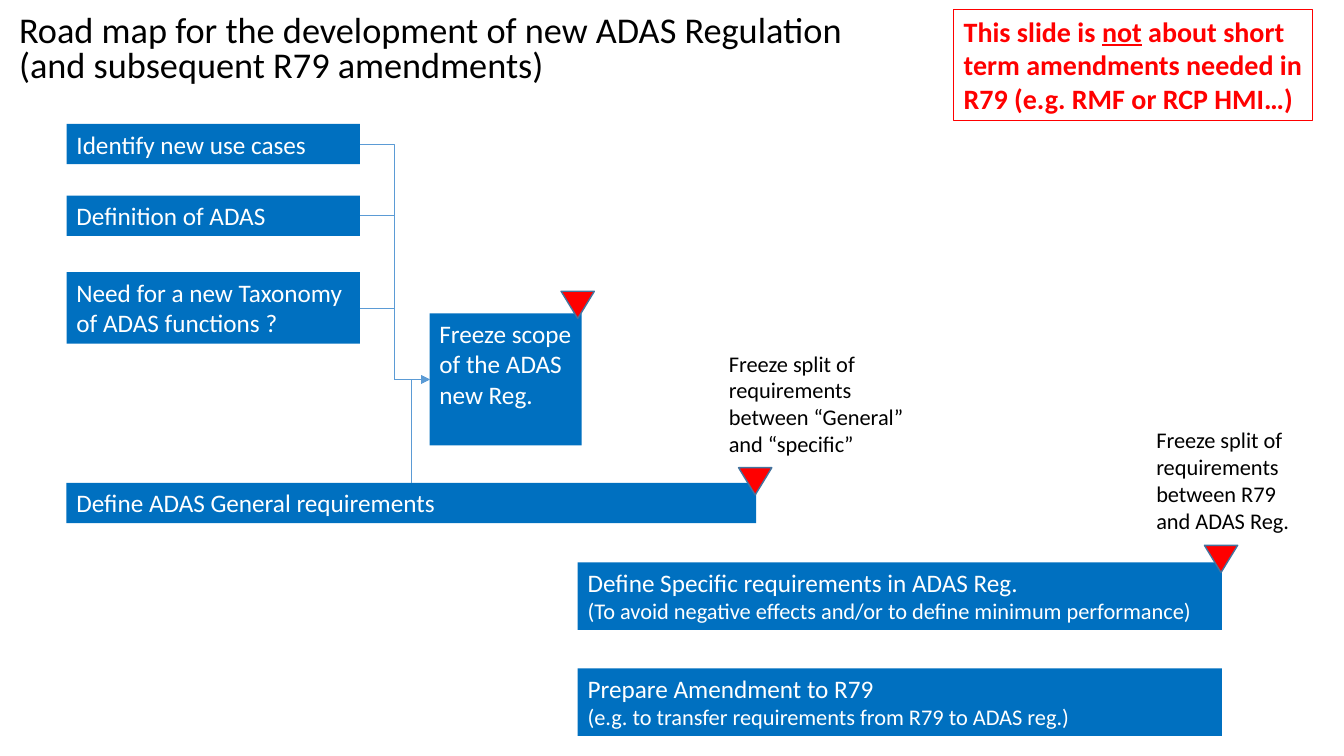
from lxml import etree
from pptx import Presentation
from pptx.dml.color import RGBColor
from pptx.enum.shapes import MSO_CONNECTOR as CONN, MSO_SHAPE as SHAPE
from pptx.enum.text import MSO_ANCHOR as ANCHOR, PP_ALIGN as ALIGN
from pptx.oxml.ns import qn
from pptx.util import Inches, Pt

BLUE, RED, WHITE, BLACK = "0070C0", "FF0000", "FFFFFF", "000000"
CONNECTOR_BLUE, MARKER_EDGE = "5B9BD5", "43739E"
TOP, LEFT, RIGHT = 0, 1, 3  # connection sites of a rectangle


def rgb(value):
    return RGBColor.from_string(value)


def write(s, paragraphs, color, anchor=ANCHOR.TOP, spacing=None):
    """Fill a shape with paragraphs, each a list of (text, font values) runs."""
    tf = s.text_frame
    tf.word_wrap = True
    tf.vertical_anchor = anchor
    for i, runs in enumerate(paragraphs):
        p = tf.add_paragraph() if i else tf.paragraphs[0]
        p.alignment = ALIGN.LEFT
        if spacing:
            p.line_spacing = spacing
        for text, values in runs:
            r = p.add_run()
            r.text = text
            r.font.color.rgb = rgb(color)
            for name, value in {"name": "Calibri", **values}.items():
                setattr(r.font, name, value)


def add_text(slide, box, lines, size, **options):
    s = slide.shapes.add_textbox(*map(Inches, box))
    write(s, [[(line, {"size": Pt(size)})] for line in lines], BLACK, **options)


def add_preset(slide, kind, box, fill=None, line=None, width=1):
    s = slide.shapes.add_shape(kind, *map(Inches, box))
    s.shadow.inherit = False
    if fill:
        s.fill.solid()
        s.fill.fore_color.rgb = rgb(fill)
    else:
        s.fill.background()
    if line:
        s.line.color.rgb = rgb(line)
        s.line.width = Pt(width)
    else:
        s.line.fill.background()
    return s


def add_task(slide, box, title, detail=None):
    s = add_preset(slide, SHAPE.RECTANGLE, box, BLUE)
    paragraphs = [[(title, {"size": Pt(18)})]]
    if detail:
        paragraphs.append([(detail, {"size": Pt(16)})])
    write(s, paragraphs, WHITE)
    return s


def add_milestone(slide, x, y):
    """Place a red marker pointing down, centred on x with its top at y."""
    width, height = 0.33, 0.27
    box = (x - width / 2, y, width, height)
    s = add_preset(slide, SHAPE.ISOSCELES_TRIANGLE, box, RED, MARKER_EDGE)
    s.rotation = 180


def connect(slide, source, site, target):
    """Run an elbow arrow from a site of source to the left side of target."""
    c = slide.shapes.add_connector(CONN.ELBOW, 0, 0, 0, 0)
    c.begin_connect(source, site)
    c.end_connect(target, LEFT)
    c.line.color.rgb = rgb(CONNECTOR_BLUE)
    c.line.width = Pt(0.5)
    etree.SubElement(c.line._get_or_add_ln(), qn("a:tailEnd"), type="triangle")
    sp_pr = c._element.spPr
    etree.SubElement(sp_pr, qn("a:effectLst"))
    if site == TOP:
        turn_upward(c, sp_pr)


def turn_upward(c, sp_pr):
    """Make the connector rise first and then go right, with a single bend."""
    across, rise = c.width, c.height
    x, y = c.left + across // 2, c.top + rise // 2
    c.left, c.top, c.width, c.height = x - rise // 2, y - across // 2, rise, across
    for name, value in {"rot": "5400000", "flipH": "1", "flipV": "1"}.items():
        sp_pr.find(qn("a:xfrm")).set(name, value)
    sp_pr.find(qn("a:prstGeom")).set("prst", "bentConnector2")


def add_notice(slide, box):
    s = add_preset(slide, SHAPE.RECTANGLE, box, line=RED, width=0.75)
    bold = {"size": Pt(20), "bold": True}
    write(s, [[("This slide is ", bold),
               ("not", {**bold, "underline": True}),
               (" about short term amendments needed in R79 (e.g. RMF or RCP HMI…)", bold)]], RED)


def add_scope_stage(slide, x):
    """Draw the preparatory tasks that lead to the frozen scope."""
    inputs = [
        (1.23, 0.4, "Identify new use cases"),
        (1.94, 0.4, "Definition of ADAS"),
        (2.7, 0.71, "Need for a new Taxonomy of ADAS functions ?"),
    ]
    tasks = [add_task(slide, (x, y, 2.91, h), text) for y, h, text in inputs]
    general = add_task(slide, (x, 4.79, 6.84, 0.4), "Define ADAS General requirements")
    scope = add_task(slide, (x + 3.6, 3.11, 1.51, 1.31), "Freeze scope of the ADAS new Reg.")
    for task in tasks:
        connect(slide, task, RIGHT, scope)
    connect(slide, general, TOP, scope)
    add_milestone(slide, x + 5.07, 2.89)
    add_milestone(slide, x + 6.83, 4.64)
    add_text(slide, (x + 6.47, 3.42, 2.22, 1.18),
             ["Freeze split of requirements between “General” and “specific”"], 16)


def add_drafting_stage(slide, x, y):
    """Draw the two drafting tasks and the milestone that ends them."""
    width, pitch = 6.39, 1.05
    tasks = [
        ("Define Specific requirements in ADAS Reg.",
         "(To avoid negative effects and/or to define minimum performance)"),
        ("Prepare Amendment to R79",
         "(e.g. to transfer requirements from R79 to ADAS reg.)"),
    ]
    for i, (title, detail) in enumerate(tasks):
        add_task(slide, (x, y + i * pitch, width, 0.67), title, detail)
    add_milestone(slide, x + width - 0.01, y - 0.17)
    add_text(slide, (x + 5.64, y - 1.4, 1.57, 1.18),
             ["Freeze split of requirements between R79 and ADAS Reg."], 16)


def main():
    prs = Presentation()
    prs.slide_width, prs.slide_height = Inches(13.33), Inches(7.5)
    slide = prs.slides.add_slide(prs.slide_layouts[6])
    add_text(slide, (0.09, 0.09, 11.28, 0.82),
             ["Road map for the development of new ADAS Regulation",
              "(and subsequent R79 amendments)"],
             25.9, anchor=ANCHOR.MIDDLE, spacing=0.8)
    add_scope_stage(slide, 0.66)
    add_drafting_stage(slide, 5.73, 5.58)
    add_notice(slide, (9.46, 0.09, 3.56, 1.11))
    prs.save("out.pptx")


if __name__ == "__main__":
    main()
